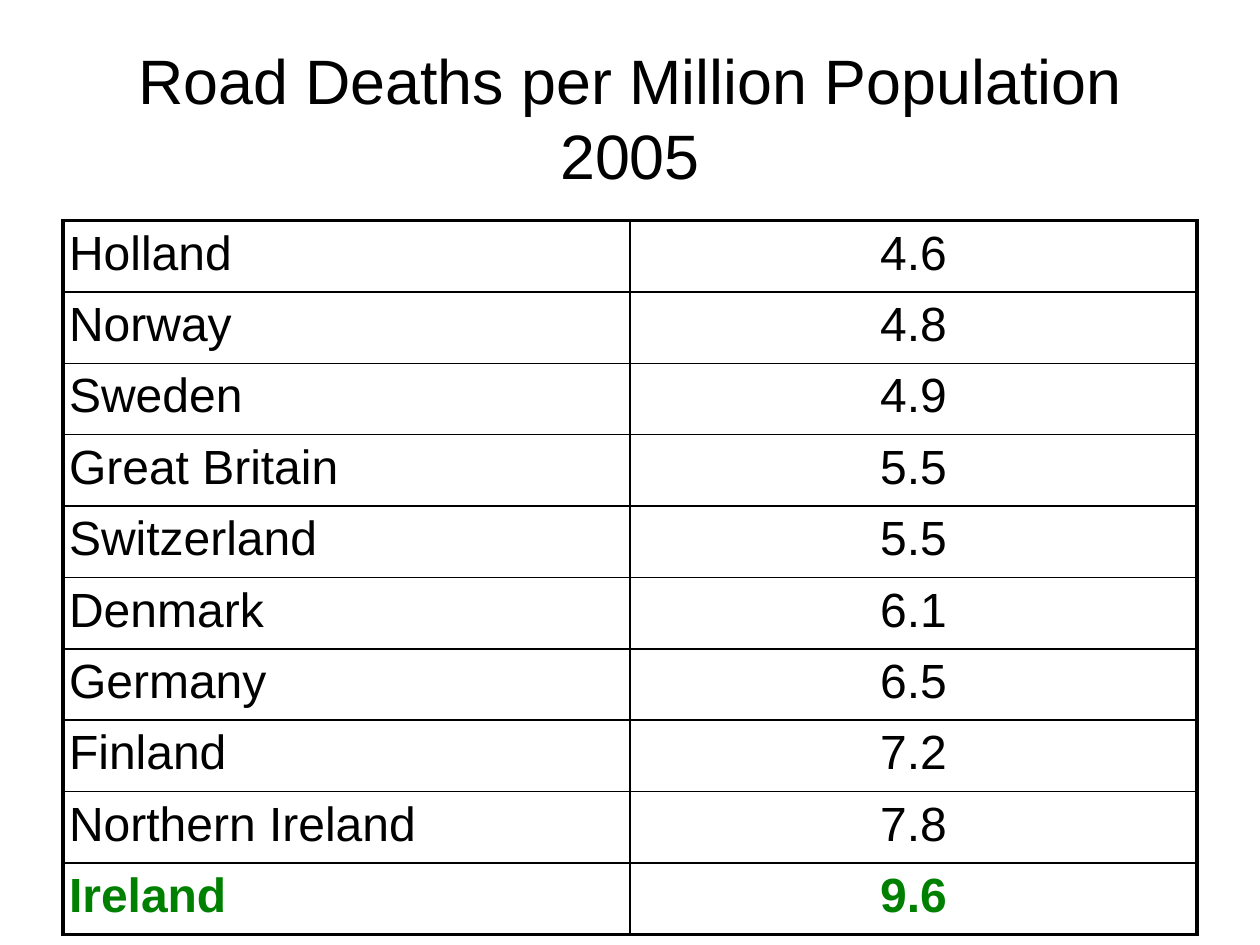
from lxml import etree
from pptx import Presentation
from pptx.dml.color import RGBColor
from pptx.enum.text import MSO_ANCHOR, PP_ALIGN
from pptx.oxml.ns import qn
from pptx.util import Inches, Pt

MIDDLE = MSO_ANCHOR.MIDDLE
LEFT, CENTER = PP_ALIGN.LEFT, PP_ALIGN.CENTER

TITLE = "Road Deaths per Million Population 2005"
DEATH_RATES = [
    ("Holland", "4.6"),
    ("Norway", "4.8"),
    ("Sweden", "4.9"),
    ("Great Britain", "5.5"),
    ("Switzerland", "5.5"),
    ("Denmark", "6.1"),
    ("Germany", "6.5"),
    ("Finland", "7.2"),
    ("Northern Ireland", "7.8"),
    ("Ireland", "9.6"),
]
HIGHLIGHT = "Ireland"
ALIGNMENTS = (LEFT, CENTER)
COLORS = {"text": "000000", "border": "000000", "highlight": "008000"}
FONT = "Arial"
OUTER, INNER = Pt(3.2), Pt(1.42)
MARGIN_X, CONTENT_WIDTH = 0.71, 12.8
ROW_HEIGHT = 0.806


def write(frame, text, size, color, alignment, bold=False):
    frame.text = text
    paragraph = frame.paragraphs[0]
    paragraph.alignment = alignment
    font = paragraph.font
    font.name, font.size, font.bold = FONT, Pt(size), bold
    font.color.rgb = RGBColor.from_string(COLORS[color])
    return paragraph


def add_borders(cell, widths):
    properties = cell._tc.get_or_add_tcPr()
    for index, (side, width) in enumerate(widths.items()):
        line = etree.Element(qn(f"a:ln{side}"), w=str(int(width)))
        fill = etree.SubElement(line, qn("a:solidFill"))
        etree.SubElement(fill, qn("a:srgbClr"), val=COLORS["border"])
        properties.insert(index, line)


def add_title(slide):
    title = slide.shapes.add_textbox(
        Inches(MARGIN_X), Inches(0.43), Inches(CONTENT_WIDTH), Inches(1.78))
    frame = title.text_frame
    frame.word_wrap = True
    frame.vertical_anchor = MIDDLE
    frame.margin_left = frame.margin_right = Inches(0.14)
    frame.margin_top = frame.margin_bottom = Inches(0.08)
    write(frame, TITLE, 51, "text", CENTER)


def add_rates(slide):
    last_row, last_column = len(DEATH_RATES) - 1, len(ALIGNMENTS) - 1
    table = slide.shapes.add_table(
        len(DEATH_RATES), len(ALIGNMENTS), Inches(MARGIN_X), Inches(2.49),
        Inches(CONTENT_WIDTH), Inches(ROW_HEIGHT * len(DEATH_RATES))).table
    table.first_row = table.horz_banding = False
    for row, rate in enumerate(DEATH_RATES):
        highlighted = rate[0] == HIGHLIGHT
        color = "highlight" if highlighted else "text"
        for column, text in enumerate(rate):
            cell = table.cell(row, column)
            cell.fill.background()
            cell.margin_left = cell.margin_right = Inches(0.07)
            cell.margin_top = cell.margin_bottom = Inches(0.07)
            paragraph = write(cell.text_frame, text, 39, color,
                              ALIGNMENTS[column], highlighted)
            paragraph.space_before = Pt(6)
            add_borders(cell, {
                "L": OUTER if column == 0 else INNER,
                "R": OUTER if column == last_column else INNER,
                "T": OUTER if row == 0 else INNER,
                "B": OUTER if row == last_row else INNER,
            })


def main():
    deck = Presentation()
    deck.slide_width, deck.slide_height = Inches(14.22), Inches(10.67)
    slide = deck.slides.add_slide(deck.slide_layouts[6])
    add_title(slide)
    add_rates(slide)
    deck.save("out.pptx")


if __name__ == "__main__":
    main()
